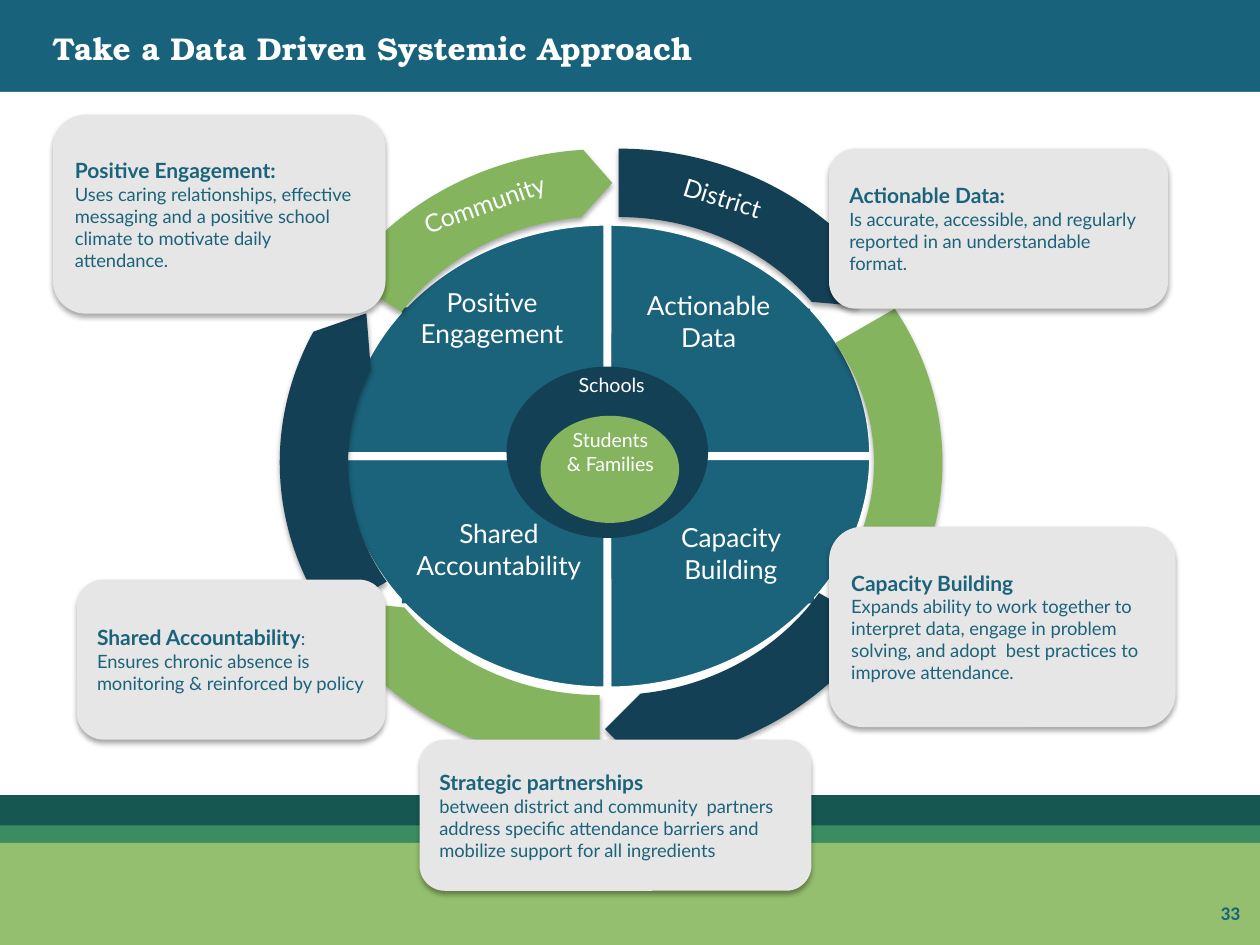
from lxml import etree
from pptx import Presentation
from pptx.dml.color import RGBColor
from pptx.enum.shapes import MSO_SHAPE
from pptx.enum.text import MSO_ANCHOR, PP_ALIGN
from pptx.oxml.ns import qn
from pptx.util import Inches, Pt

RECTANGLE, ROUNDED = MSO_SHAPE.RECTANGLE, MSO_SHAPE.ROUNDED_RECTANGLE
OVAL, PIE, ARROW = MSO_SHAPE.OVAL, MSO_SHAPE.PIE, MSO_SHAPE.CIRCULAR_ARROW
LEFT, CENTER = PP_ALIGN.LEFT, PP_ALIGN.CENTER
TOP, MIDDLE = MSO_ANCHOR.TOP, MSO_ANCHOR.MIDDLE

COLORS = {
    "white": "FFFFFF", "header": "18637B", "teal": "1B637A", "navy": "144056",
    "green": "84B45E", "card": "E6E6E6", "dark_band": "165751",
    "mid_band": "3B8D61", "light_band": "94BF6E", "shadow": "000000",
}
BODY_FONT, TITLE_FONT, NUMBER_FONT = "Lato", "TeX Gyre Bonum", "Calibri"

# Full-width bands: top, height, color
BANDS = [
    (6.26, 0.35, "dark_band"), (0, 0.77, "header"), (0.73, 5.58, "white"),
    (6.55, 0.17, "mid_band"), (6.69, 0.81, "light_band"),
]

# Quarters of the wheel: first angle, end angle, left and top of the inner block
WHEEL = (2.71, 1.76, 4.22, 3.72)
BLOCK_SIZE = (1.56, 1.11)
QUARTERS = [
    (270, 0, 4.87, 2.45), (0, 90, 4.9, 3.68),
    (90, 180, 3.19, 3.68), (180, 270, 3.19, 2.44),
]

# Outer ring: left, top, color, thickness, head angle, end angle, start angle
RING_SIZE = (4.98, 4.6)
HEAD_WIDTH = 0.059
RING = [
    (2.42, 1.18, "navy", 0.119, 3.275, 195.321, 162.003),
    (2.5, 1.37, "green", 0.119, 3.275, 14.812, 198),
    (2.37, 1.46, "navy", 0.119, 4.649, 50.33, 18),
    (2.27, 1.46, "green", 0.119, 3.275, 87.833, 54.003),
    (2.22, 1.37, "navy", 0.119, 5.567, 122.402, 90),
    (2.3, 1.18, "green", 0.116, 4.098, 159.064, 127.236),
]

# Center ovals: box, color
CORE = [((4.02, 2.91, 1.6, 1.36), "navy"), ((4.29, 3.3, 1.1, 0.85), "green")]

# Labels on the wheel: text, box, size, rotation
WHEEL_LABELS = [
    ("Students & Families", (4.38, 3.35, 0.93, 0.48), 11.2, 0),
    ("Schools", (4.39, 2.91, 0.93, 0.29), 11.2, 0),
    ("Actionable Data", (5.01, 2.25, 1.23, 0.61), 15, 0),
    ("Positive Engagement", (3.21, 2.22, 1.39, 0.61), 15, 0),
    ("Capacity Building", (5.24, 4.09, 1.12, 0.61), 15, 0),
    ("Shared Accountability", (3.18, 4.06, 1.56, 0.61), 15, 0),
]
RING_LABELS = [
    ("Community", (2.94, 1.45, 1.81, 0.34), 14.2, 340.4),
    ("District", (4.83, 1.4, 1.81, 0.34), 14.2, 17.3),
]

# Cards: box, heading, plain ending of the heading, body
CARDS = [
    ((6.58, 1.18, 2.69, 1.27), "Actionable Data:", "",
     "Is accurate, accessible, and regularly reported in an understandable format."),
    ((6.58, 4.18, 2.75, 1.59), "Capacity Building", "",
     "Expands ability to work together to interpret data, engage in problem "
     "solving, and adopt  best practices to improve attendance."),
    ((0.42, 0.91, 2.64, 1.58), "Positive Engagement:", "",
     "Uses caring relationships, effective messaging and a positive school "
     "climate to motivate daily attendance."),
    ((0.61, 4.6, 2.45, 1.27), "Shared Accountability", ":",
     "Ensures chronic absence is monitoring & reinforced by policy"),
    ((3.33, 5.87, 3.11, 1.2), "Strategic partnerships", "",
     "between district and community  partners  address specific attendance "
     "barriers and mobilize support for all ingredients"),
]


def rgb(name):
    return RGBColor.from_string(COLORS[name])


def add_soft_shadow(shape):
    effects = shape._element.spPr.find(qn("a:effectLst"))
    shadow = etree.SubElement(
        effects, qn("a:outerShdw"), blurRad=str(Pt(3.1)), dist=str(Pt(1.8)),
        dir="5400000", algn="t", rotWithShape="0")
    color = etree.SubElement(shadow, qn("a:srgbClr"), val=COLORS["shadow"])
    etree.SubElement(color, qn("a:alpha"), val="35000")


def add_filled(slide, kind, box, color, adjustments=(), outline=None, shadow=False):
    shape = slide.shapes.add_shape(kind, *map(Inches, box))
    shape.shadow.inherit = False
    shape.fill.solid()
    shape.fill.fore_color.rgb = rgb(color)
    if outline:
        shape.line.color.rgb = rgb(outline)
        shape.line.width = Pt(4.5)
    else:
        shape.line.fill.background()
    for index, value in enumerate(adjustments):
        shape.adjustments[index] = value
    if shadow:
        add_soft_shadow(shape)
    return shape


def style_run(run, size, color, bold=False, font=BODY_FONT):
    run.font.name = font
    run.font.size = Pt(size)
    run.font.bold = bold
    run.font.color.rgb = rgb(color)


def add_label(slide, text, box, size, color="white", rotation=0, align=CENTER,
              anchor=TOP, bold=False, font=BODY_FONT):
    label = slide.shapes.add_textbox(*map(Inches, box))
    label.rotation = rotation
    frame = label.text_frame
    frame.word_wrap = True
    frame.vertical_anchor = anchor
    frame.text = text
    paragraph = frame.paragraphs[0]
    paragraph.alignment = align
    style_run(paragraph.runs[0], size, color, bold, font)


def add_card(slide, box, heading, ending, body):
    card = add_filled(slide, ROUNDED, box, "card", shadow=True)
    frame = card.text_frame
    frame.word_wrap = True
    frame.vertical_anchor = MIDDLE
    frame.text = heading
    first = frame.paragraphs[0]
    style_run(first.runs[0], 12, "teal", bold=True)
    if ending:
        run = first.add_run()
        run.text = ending
        style_run(run, 10.5, "teal")
    second = frame.add_paragraph()
    second.text = body
    style_run(second.runs[0], 10.5, "teal")
    for paragraph in frame.paragraphs:
        paragraph.alignment = LEFT


def main():
    presentation = Presentation()
    presentation.slide_width, presentation.slide_height = Inches(10), Inches(7.5)
    slide = presentation.slides.add_slide(presentation.slide_layouts[6])

    # Background bands and page number
    for top, height, color in BANDS:
        add_filled(slide, RECTANGLE, (0, top, 10, height), color)
    add_label(slide, "33", (9.59, 7.1, 0.5, 0.29), 11, "teal", align=LEFT,
              bold=True, font=NUMBER_FONT)

    # Wheel quarters; 0.6 turns degrees into adjustment units
    for start, end, left, top in QUARTERS:
        add_filled(slide, PIE, WHEEL, "teal", (start * 0.6, end * 0.6), "white")
        add_filled(slide, RECTANGLE, (left, top, *BLOCK_SIZE), "teal")

    # Ring of arrows
    for left, top, color, *adjustments in RING:
        add_filled(slide, ARROW, (left, top, *RING_SIZE), color,
                   (*adjustments, HEAD_WIDTH), shadow=True)

    # Center and wheel labels
    for box, color in CORE:
        add_filled(slide, OVAL, box, color)
    for text, box, size, rotation in WHEEL_LABELS + RING_LABELS:
        add_label(slide, text, box, size, rotation=rotation)

    # Explanation cards
    for card in CARDS:
        add_card(slide, *card)

    # Title
    add_label(slide, "Take a Data Driven Systemic Approach", (0.32, 0, 5.61, 0.76),
              18, align=LEFT, anchor=MIDDLE, bold=True, font=TITLE_FONT)

    presentation.save("out.pptx")


if __name__ == "__main__":
    main()
